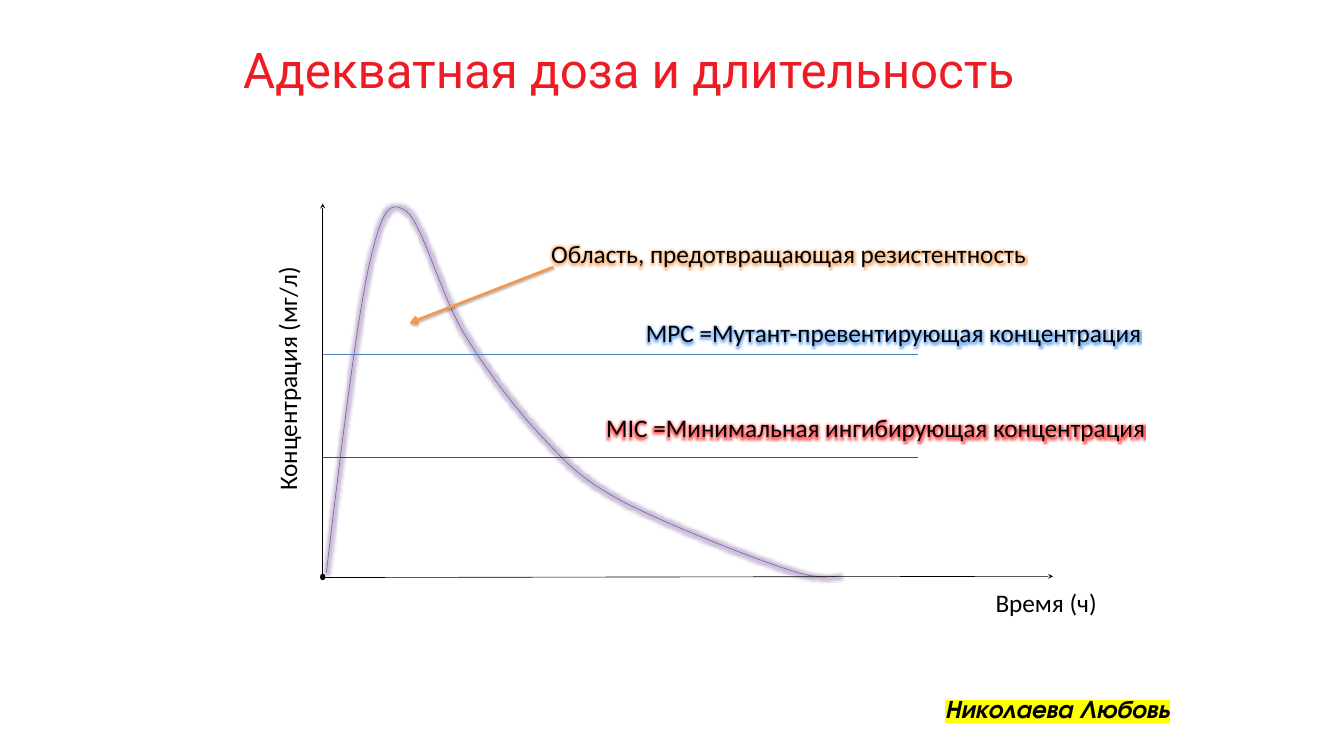
import dataclasses

import pptx
import pptx.dml.color
import pptx.enum.shapes
import pptx.enum.text
import pptx.oxml
import pptx.oxml.ns
import pptx.util

Inches = pptx.util.Inches


@dataclasses.dataclass(frozen=True)
class Theme:
    title: str = "ED1C24"
    black: str = "000000"
    curve: str = "7D60A0"
    curve_glow: str = "8064A2"
    mpc: str = "4B7EBC"
    mpc_glow: str = "3C8CF0"
    mic: str = "FF0000"
    accent: str = "F79646"
    highlight: str = "FFFF00"
    body_font: str = "Calibri"
    title_font: str = "Roboto"
    author_font: str = "TeX Gyre Adventor"
    title_size: float = 58
    body_size: float = 29.7
    thin: float = 0.75
    thick: float = 3


THEME = Theme()

# Curve: start point, then cubic segments (two control points and an end point)
CURVE_START = (5.34, 9.36)
CURVE_SEGMENTS = [
    ((5.58, 7.36), (5.82, 5.36), (6.03, 4.38)),
    ((6.25, 3.39), (6.38, 3.28), (6.64, 3.45)),
    ((6.9, 3.63), (7.21, 4.81), (7.57, 5.42)),
    ((7.94, 6.04), (8.43, 6.68), (8.86, 7.14)),
    ((9.28, 7.59), (9.49, 7.82), (10.12, 8.17)),
    ((10.75, 8.51), (12.03, 9.02), (12.63, 9.23)),
    ((13.23, 9.44), (13.31, 9.45), (13.72, 9.43)),
]
STEPS = 16
AXIS_X = 5.28
LEVEL_END = 15.02


def rgb(color):
    return pptx.dml.color.RGBColor.from_string(color)


def set_format(target, values):
    for name, value in values.items():
        setattr(target, name, value)


def xml(tag, body="", attributes=""):
    namespace = pptx.oxml.ns.nsdecls("a")
    return pptx.oxml.parse_xml(f"<a:{tag} {namespace} {attributes}>{body}</a:{tag}>")


def color_xml(color, alpha=100):
    return f'<a:srgbClr val="{color}"><a:alpha val="{alpha * 1000}"/></a:srgbClr>'


def glow(color, radius, alpha):
    size = pptx.util.Pt(radius)
    return xml("effectLst", f'<a:glow rad="{size}">{color_xml(color, alpha)}</a:glow>')


def drop_shadow():
    blur, distance = pptx.util.Pt(3.1), pptx.util.Pt(1.8)
    return xml("effectLst", f'<a:outerShdw blurRad="{blur}" dist="{distance}" dir="5400000" '
               f'rotWithShape="0">{color_xml(THEME.black, 35)}</a:outerShdw>')


def add_text(shapes, text, box, glow_color=None, highlight=None, color=THEME.black,
             margin=None, rotation=0, **font_values):
    shape = shapes.add_textbox(*map(Inches, box))
    shape.rotation = rotation
    frame = shape.text_frame
    frame.word_wrap = True
    if margin is not None:
        sides = ("left", "top", "right", "bottom")
        set_format(frame, {f"margin_{side}": Inches(margin) for side in sides})
    run = frame.paragraphs[0].add_run()
    run.text = text
    values = {"name": THEME.body_font, "size": THEME.body_size} | font_values
    values["size"] = pptx.util.Pt(values["size"])
    set_format(run.font, values)
    run.font.color.rgb = rgb(color)
    # Effects and highlight stand between the fill and the typeface
    latin = run.font._element.find(pptx.oxml.ns.qn("a:latin"))
    if glow_color:
        latin.addprevious(glow(glow_color, 8, 60))
    if highlight:
        latin.addprevious(xml("highlight", color_xml(highlight)))


def style_line(shape, color, width):
    shape.line.color.rgb = rgb(color)
    shape.line.width = pptx.util.Pt(width)


def add_line(shapes, start, end, color=THEME.black, width=THEME.thin,
             head=None, tail=None, effect=None):
    connector = shapes.add_connector(pptx.enum.shapes.MSO_CONNECTOR.STRAIGHT,
                                     *map(Inches, start + end))
    style_line(connector, color, width)
    line = connector.line._get_or_add_ln()
    for tag, kind in (("headEnd", head), ("tailEnd", tail)):
        if kind:
            line.append(xml(tag, attributes=f'type="{kind}"'))
    connector._element.spPr.append(xml("effectLst") if effect is None else effect)


def curve_points():
    start = CURVE_START
    for first, second, end in CURVE_SEGMENTS:
        for step in range(1, STEPS + 1):
            t = step / STEPS
            u = 1 - t
            weights = (u ** 3, 3 * u * u * t, 3 * u * t * t, t ** 3)
            controls = (start, first, second, end)
            yield tuple(Inches(sum(w * point[axis] for w, point in zip(weights, controls)))
                        for axis in (0, 1))
        start = end


def add_curve(shapes):
    builder = shapes.build_freeform(*map(Inches, CURVE_START))
    builder.add_line_segments(curve_points(), close=False)
    curve = builder.convert_to_shape()
    curve.fill.background()
    style_line(curve, THEME.curve, THEME.thin)
    curve._element.spPr.append(glow(THEME.curve_glow, 8, 40))


def add_level(slide, text, y, box, color, glow_color):
    shapes = slide.shapes.add_group_shape().shapes
    add_line(shapes, (AXIS_X, y), (LEVEL_END, y), color)
    add_text(shapes, text, box, glow_color)


def add_callout(slide):
    shapes = slide.shapes.add_group_shape().shapes
    add_text(shapes, "Область, предотвращающая резистентность",
             (8.92, 3.85, 8.83, 0.6), THEME.accent)
    add_line(shapes, (9.05, 4.37), (6.71, 5.28), THEME.accent, THEME.thick,
             tail="arrow", effect=drop_shadow())


def add_axes(slide):
    shapes = slide.shapes.add_group_shape().shapes
    add_line(shapes, (AXIS_X, 9.43), (AXIS_X, 3.33), head="oval", tail="stealth")
    add_line(shapes, (AXIS_X, 9.45), (17.23, 9.43), head="oval", tail="stealth")
    add_text(shapes, "Время (ч)", (16.19, 9.56, 2.47, 0.6))
    add_text(shapes, "Концентрация (мг/л)", (2.3, 5.43, 4.8, 0.6), rotation=270)


def main():
    presentation = pptx.Presentation()
    set_format(presentation, {"slide_width": Inches(21.99), "slide_height": Inches(12.37)})
    slide = presentation.slides.add_slide(presentation.slide_layouts[6])

    # Title
    add_text(slide.shapes, "Адекватная доза и длительность", (3.98, 0.65, 14.02, 2.34),
             color=THEME.title, margin=0, name=THEME.title_font, size=THEME.title_size)

    # Concentration diagram
    add_curve(slide.shapes)
    add_level(slide, "MPC =Мутант-превентирующая концентрация", 5.79,
              (10.47, 5.15, 8.7, 0.6), THEME.mpc, THEME.mpc_glow)
    add_level(slide, "MIC =Минимальная ингибирующая концентрация", 7.48,
              (9.82, 6.7, 9.41, 0.6), THEME.mic, THEME.mic)
    add_callout(slide)
    add_axes(slide)

    # Author
    add_text(slide.shapes, "Николаева Любовь", (15.36, 11.29, 6.28, 0.6),
             highlight=THEME.highlight, name=THEME.author_font, bold=True, italic=True)

    presentation.save("out.pptx")


if __name__ == "__main__":
    main()
